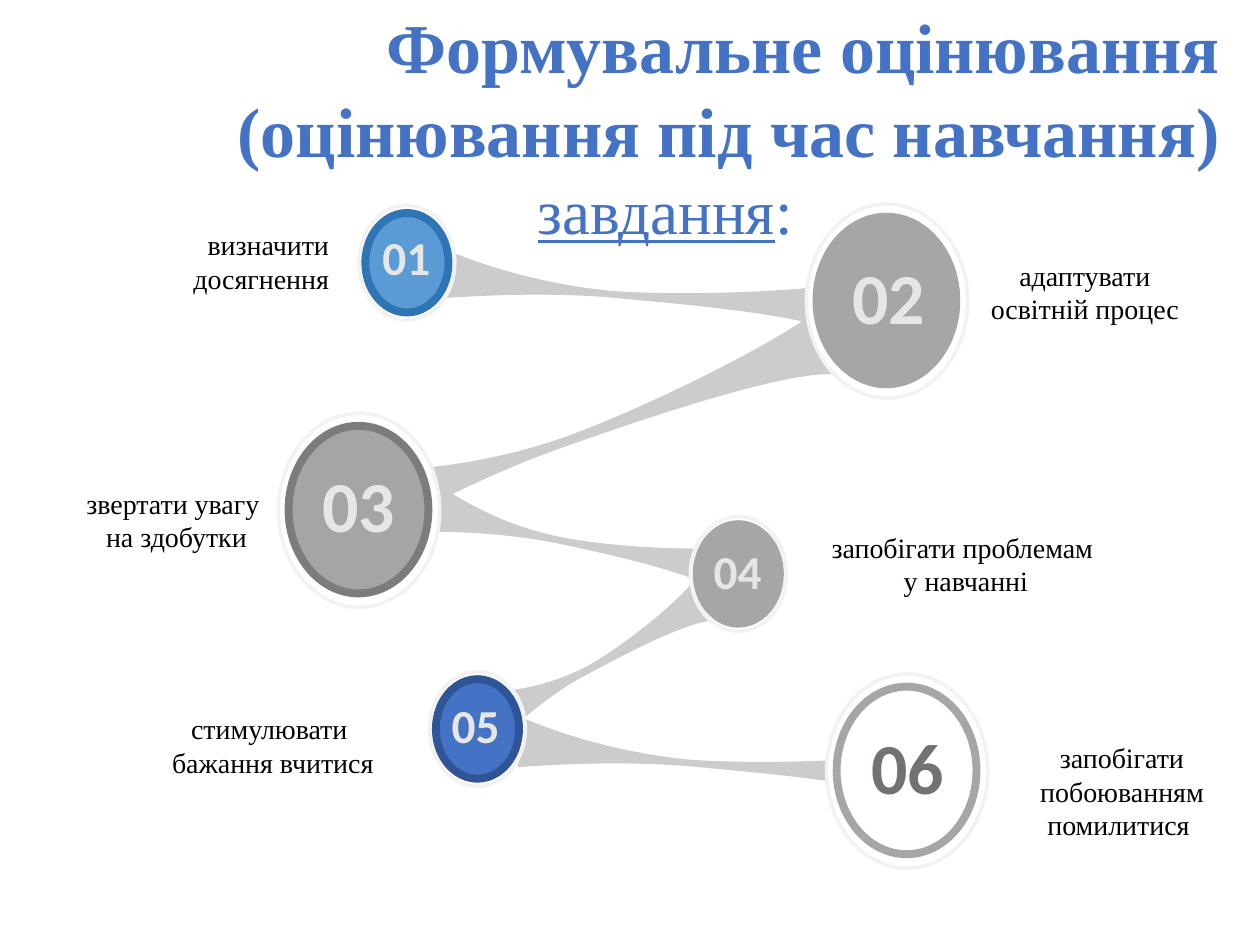
import math
from dataclasses import dataclass

from lxml import etree
from pptx import Presentation
from pptx import util as u
from pptx.dml.color import RGBColor
from pptx.enum import shapes, text
from pptx.oxml.ns import qn

PX = 9144  # EMU in one px, 100 px to the inch
SERIF, SANS = "Times New Roman", "Calibri"
CENTER, RIGHT = text.PP_ALIGN.CENTER, text.PP_ALIGN.RIGHT

COLORS = {
    "white": "FFFFFF", "black": "000000", "ring": "F2F2F2", "ribbon": "CCCCCC",
    "sky": "5B9BD5", "sky_dark": "2E75B6", "blue": "4472C4", "blue_dark": "2F5597",
    "gray": "A5A5A5", "gray_dark": "7C7C7C", "silver": "A6A6A6",
    "pale": "E7E6E6", "taupe": "767171",
}

Point = tuple[int, int]


@dataclass(frozen=True)
class Size:
    width: int
    height: int
    disc_width: int
    disc_height: int
    number_width: int
    number_height: int
    points: int


@dataclass(frozen=True)
class Badge:
    number: str
    left: int
    top: int
    size: Size
    number_left: int
    number_top: int
    fill: str
    line: str
    font: str = "pale"


@dataclass(frozen=True)
class Ribbon:
    """Two edges of two cubic curves each: start point, then triples."""
    rotation: float
    center: Point
    upper: list[Point]
    lower: list[Point]
    dx: int = 0
    dy: int = 0


@dataclass(frozen=True)
class Label:
    lines: list[str]
    left: int
    top: int
    width: int
    height: int = 64
    align: text.PP_ALIGN = CENTER


SMALL = Size(76, 91, 66, 79, 67, 42, 27)
LARGE = Size(128, 154, 111, 133, 91, 59, 41)

BADGES = [
    Badge("01", 285, 163, SMALL, 289, 185, "sky", "sky_dark"),
    Badge("03", 221, 328, LARGE, 239, 374, "gray", "gray_dark"),
    Badge("02", 640, 162, LARGE, 660, 209, "silver", "silver"),
    Badge("04", 548, 410, SMALL, 552, 434, "silver", "silver"),
    Badge("05", 341, 533, SMALL, 344, 556, "blue", "blue_dark"),
    Badge("06", 656, 535, LARGE, 675, 582, "white", "silver", "taupe"),
]

LONG_UPPER = [(353, 198), (386, 212), (433, 226), (485, 231), (538, 235), (632, 232), (669, 225)]
LONG_LOWER = [(665, 264), (634, 249), (535, 241), (482, 236), (429, 232), (377, 235), (349, 237)]

RIBBONS = [
    Ribbon(4.9, (508, 230), LONG_UPPER, LONG_LOWER, 62, 372),
    Ribbon(331.9, (476, 521),
           [(383, 549), (406, 549), (436, 544), (465, 529), (493, 514), (538, 478), (552, 459)],
           [(570, 492), (548, 491), (494, 520), (466, 535), (437, 550), (413, 572), (401, 583)]),
    Ribbon(11.8, (462, 428),
           [(349, 385), (372, 401), (405, 418), (444, 426), (483, 434), (554, 438), (582, 433)],
           [(574, 471), (553, 455), (480, 439), (441, 431), (402, 423), (362, 422), (341, 422)]),
    Ribbon(4.9, (508, 230), LONG_UPPER, LONG_LOWER),
    Ribbon(340.9, (473, 335),
           [(285, 374), (329, 374), (388, 368), (448, 347), (507, 326), (609, 276), (645, 249)],
           [(661, 297), (620, 295), (506, 334), (447, 355), (387, 376), (331, 406), (302, 421)]),
]

LABELS = [
    Label(["визначити досягнення"], 46, 176, 225, align=RIGHT),
    Label(["звертати увагу ", "на здобутки"], 34, 381, 212),
    Label(["стимулювати ", "бажання вчитися"], 72, 560, 289),
    Label(["адаптувати освітній процес"], 760, 200, 202),
    Label(["запобігати проблемам ", "у навчанні"], 622, 416, 289),
    Label(["запобігати побоюванням помилитися "], 794, 583, 193, 91),
]


def color(name: str) -> RGBColor:
    return RGBColor.from_string(COLORS[name])


def level_points(ribbon: Ribbon) -> list[Point]:
    """Turn the outline back to level about its center, in EMU."""
    angle = math.radians(-ribbon.rotation)
    cosine, sine = math.cos(angle), math.sin(angle)
    center_x, center_y = ribbon.center
    points = []
    for x, y in ribbon.upper + ribbon.lower:
        x, y = x - center_x, y - center_y
        points.append((round((center_x + ribbon.dx + x * cosine - y * sine) * PX),
                       round((center_y + ribbon.dy + x * sine + y * cosine) * PX)))
    return points


def bend_edges(shape) -> None:
    """Merge each edge's straight segments, three by three, into cubic curves."""
    path = shape.element.find(".//" + qn("a:path"))
    segments = path.findall(qn("a:lnTo"))
    edges = segments[:6], segments[7:13]
    for edge in edges:
        for start in (0, 3):
            curve = etree.Element(qn("a:cubicBezTo"))
            edge[start].addprevious(curve)
            for segment in edge[start:start + 3]:
                curve.append(segment[0])
                path.remove(segment)


def draw_ribbon(slide, ribbon: Ribbon) -> None:
    outline = level_points(ribbon)
    builder = slide.shapes.build_freeform(*outline[0], scale=1.0)
    builder.add_line_segments(outline[1:], close=True)
    shape = builder.convert_to_shape()
    bend_edges(shape)
    shape.rotation = ribbon.rotation
    shape.shadow.inherit = False
    shape.fill.solid()
    shape.fill.fore_color.rgb = color("ribbon")
    shape.line.fill.background()


def draw_ellipse(slide, left: int, top: int, width: int, height: int,
                 fill: str, line: str, points: float) -> None:
    shape = slide.shapes.add_shape(
        shapes.MSO_SHAPE.OVAL, left * PX, top * PX, width * PX, height * PX)
    shape.shadow.inherit = False
    shape.fill.solid()
    shape.fill.fore_color.rgb = color(fill)
    shape.line.color.rgb = color(line)
    shape.line.width = u.Pt(points)


def draw_text(slide, lines: list[str], left: int, top: int, width: int, height: int,
              font: str, points: float, fill: str, align: text.PP_ALIGN = CENTER,
              bold: bool = False):
    box = slide.shapes.add_textbox(left * PX, top * PX, width * PX, height * PX)
    frame = box.text_frame
    frame.word_wrap = True
    frame.text = "\n".join(lines)
    for paragraph in frame.paragraphs:
        paragraph.alignment = align
        for run in paragraph.runs:
            run.font.name = font
            run.font.size = u.Pt(points)
            run.font.bold = bold
            run.font.color.rgb = color(fill)
    return frame


def draw_badge(slide, badge: Badge) -> None:
    size = badge.size
    draw_ellipse(slide, badge.left, badge.top, size.width, size.height, "white", "ring", 2)
    draw_ellipse(slide, badge.left + (size.width - size.disc_width) // 2,
                 badge.top + (size.height - size.disc_height) // 2,
                 size.disc_width, size.disc_height, badge.fill, badge.line, 4.5)


def draw_number(slide, badge: Badge) -> None:
    size = badge.size
    frame = draw_text(slide, [badge.number], badge.number_left, badge.number_top,
                      size.number_width, size.number_height,
                      SANS, size.points, badge.font, bold=True)
    frame.paragraphs[0].line_spacing = 0.8


def draw_title(slide) -> None:
    frame = draw_text(slide, ["Формувальне оцінювання", "(оцінювання під час навчання)", "завдання"],
                      78, 37, 900, 125, SERIF, 40, "blue", RIGHT, bold=True)
    frame.vertical_anchor = text.MSO_ANCHOR.MIDDLE
    task = frame.paragraphs[2]
    task.alignment = CENTER
    task.add_run().text = ":"
    for run, underline in zip(task.runs, (True, False)):
        run.font.name = SERIF
        run.font.size = u.Pt(36)
        run.font.bold = False
        run.font.underline = underline
        run.font.color.rgb = color("blue")


def main() -> None:
    presentation = Presentation()
    presentation.slide_width, presentation.slide_height = 1000 * PX, 750 * PX
    slide = presentation.slides.add_slide(presentation.slide_layouts[6])
    for ribbon in RIBBONS:
        draw_ribbon(slide, ribbon)
    for badge in BADGES:
        draw_badge(slide, badge)
    for badge in BADGES:
        draw_number(slide, badge)
    for label in LABELS:
        draw_text(slide, label.lines, label.left, label.top, label.width, label.height,
                  SERIF, 16, "black", label.align)
    draw_title(slide)
    presentation.save("out.pptx")


if __name__ == "__main__":
    main()
